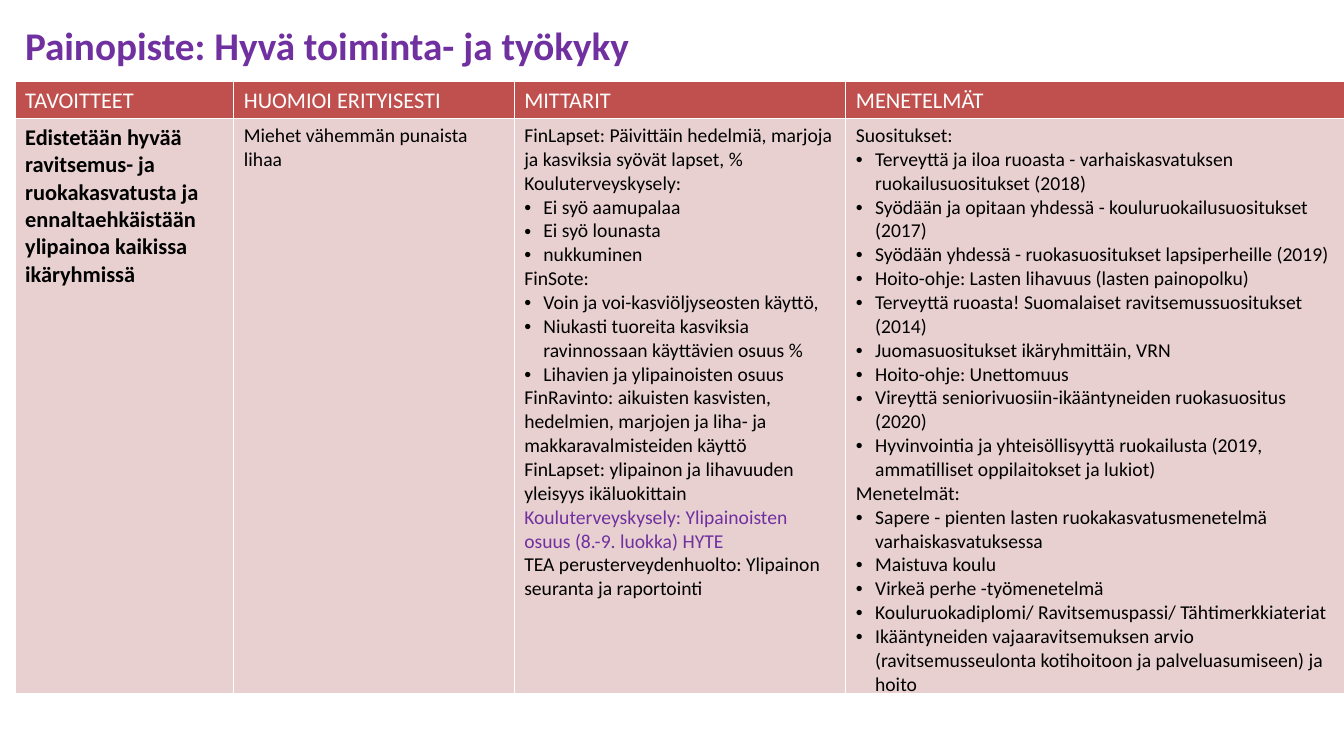
from lxml.etree import SubElement as Sub
from pptx import Presentation
from pptx.dml.color import RGBColor as Rgb
from pptx.enum.text import MSO_ANCHOR as Anchor
from pptx.oxml import parse_xml
from pptx.oxml.ns import nsdecls, qn
from pptx.util import Inches, Pt

FONT = "Calibri"
HUES = {"white": "FFFFFF", "black": "000000", "purple": "7030A0",
        "red": "C0504D", "pink": "E8D0D0"}
MARK = "• "
TITLE = "Painopiste: Hyvä toiminta- ja työkyky"
WIDTHS = [2.17, 2.78, 3.29, 4.98]
HEIGHTS = [0.37, 5.54]
HEADS = ["TAVOITTEET", "HUOMIOI ERITYISESTI", "MITTARIT", "MENETELMÄT"]
GOAL = ["Edistetään hyvää ravitsemus- ja ruokakasvatusta ja "
        "ennaltaehkäistään ylipainoa kaikissa ikäryhmissä"]
FOCUS = ["Miehet vähemmän punaista lihaa"]
HYTE = "Kouluterveyskysely: Ylipainoisten osuus (8.-9. luokka) HYTE"
METERS = [
    "FinLapset: Päivittäin hedelmiä, marjoja ja kasviksia syövät lapset, %",
    "Kouluterveyskysely:",
    "• Ei syö aamupalaa",
    "• Ei syö lounasta",
    "• nukkuminen",
    "FinSote:",
    "• Voin ja voi-kasviöljyseosten käyttö,",
    "• Niukasti tuoreita kasviksia ravinnossaan käyttävien osuus %",
    "• Lihavien ja ylipainoisten osuus",
    "FinRavinto: aikuisten kasvisten, hedelmien, marjojen ja liha- ja "
    "makkaravalmisteiden käyttö",
    "FinLapset: ylipainon ja lihavuuden yleisyys ikäluokittain",
    HYTE,
    "TEA perusterveydenhuolto: Ylipainon seuranta ja raportointi",
]
METHODS = [
    "Suositukset:",
    "• Terveyttä ja iloa ruoasta - varhaiskasvatuksen ruokailusuositukset (2018)",
    "• Syödään ja opitaan yhdessä - kouluruokailusuositukset (2017)",
    "• Syödään yhdessä - ruokasuositukset lapsiperheille (2019)",
    "• Hoito-ohje: Lasten lihavuus (lasten painopolku)",
    "• Terveyttä ruoasta! Suomalaiset ravitsemussuositukset (2014)",
    "• Juomasuositukset ikäryhmittäin, VRN",
    "• Hoito-ohje: Unettomuus",
    "• Vireyttä seniorivuosiin-ikääntyneiden ruokasuositus (2020)",
    "• Hyvinvointia ja yhteisöllisyyttä ruokailusta (2019, ammatilliset "
    "oppilaitokset ja lukiot)",
    "Menetelmät:",
    "• Sapere - pienten lasten ruokakasvatusmenetelmä varhaiskasvatuksessa",
    "• Maistuva koulu",
    "• Virkeä perhe -työmenetelmä",
    "• Kouluruokadiplomi/ Ravitsemuspassi/ Tähtimerkkiateriat",
    "• Ikääntyneiden vajaaravitsemuksen arvio (ravitsemusseulonta "
    "kotihoitoon ja palveluasumiseen) ja hoito",
]


def style(para, size, hue, bold=False):
    for run in para.runs:
        font = run.font
        font.name, font.size, font.bold = FONT, Pt(size), bold
        font.color.rgb = Rgb.from_string(HUES[hue])


def bullet(para):
    props = para._p.get_or_add_pPr()
    indent = Inches(0.19)
    props.set("marL", str(indent))
    props.set("indent", str(-indent))
    Sub(props, qn("a:buFont")).set("typeface", "Arial")
    Sub(props, qn("a:buChar")).set("char", MARK.strip())


def edge(cell):
    """Give the cell thin white borders."""
    props = cell._tc.get_or_add_tcPr()
    for spot, side in enumerate("LRTB"):
        props.insert(spot, parse_xml(
            f'<a:ln{side} {nsdecls("a")} w="{Pt(1)}"><a:solidFill>'
            f'<a:srgbClr val="{HUES["white"]}"/></a:solidFill></a:ln{side}>'))


def fill(cell, lines, size, hue, back, bold=False):
    cell.fill.solid()
    cell.fill.fore_color.rgb = Rgb.from_string(HUES[back])
    edge(cell)
    frame = cell.text_frame
    frame.text = "\n".join(line.removeprefix(MARK) for line in lines)
    for para, line in zip(frame.paragraphs, lines):
        if line.startswith(MARK):
            bullet(para)
        style(para, size, "purple" if line == HYTE else hue, bold)


def add_title(slide, left, top, width, height):
    box = slide.shapes.add_textbox(*map(Inches, (left, top, width, height)))
    frame = box.text_frame
    frame.word_wrap = True
    frame.vertical_anchor = Anchor.MIDDLE
    frame.text = TITLE
    style(frame.paragraphs[0], 28, "purple", True)


def add_grid(slide, left, top):
    size = sum(WIDTHS), sum(HEIGHTS)
    table = slide.shapes.add_table(
        len(HEIGHTS), len(WIDTHS), *map(Inches, (left, top, *size))).table
    for row, height in zip(table.rows, HEIGHTS):
        row.height = Inches(height)
    bodies = [GOAL, FOCUS, METERS, METHODS]
    for col, (width, head, body) in enumerate(zip(WIDTHS, HEADS, bodies)):
        table.columns[col].width = Inches(width)
        fill(table.cell(0, col), [head], 16, "white", "red")
        first = col == 0
        fill(table.cell(1, col), body, 16 if first else 14, "black", "pink", first)


def main():
    deck = Presentation()
    deck.slide_width, deck.slide_height = Inches(13.33), Inches(7.5)
    slide = deck.slides.add_slide(deck.slide_layouts[6])
    add_title(slide, 0.15, 0.2, 12, 0.5)
    add_grid(slide, 0.15, 0.81)
    deck.save("out.pptx")


if __name__ == "__main__":
    main()
